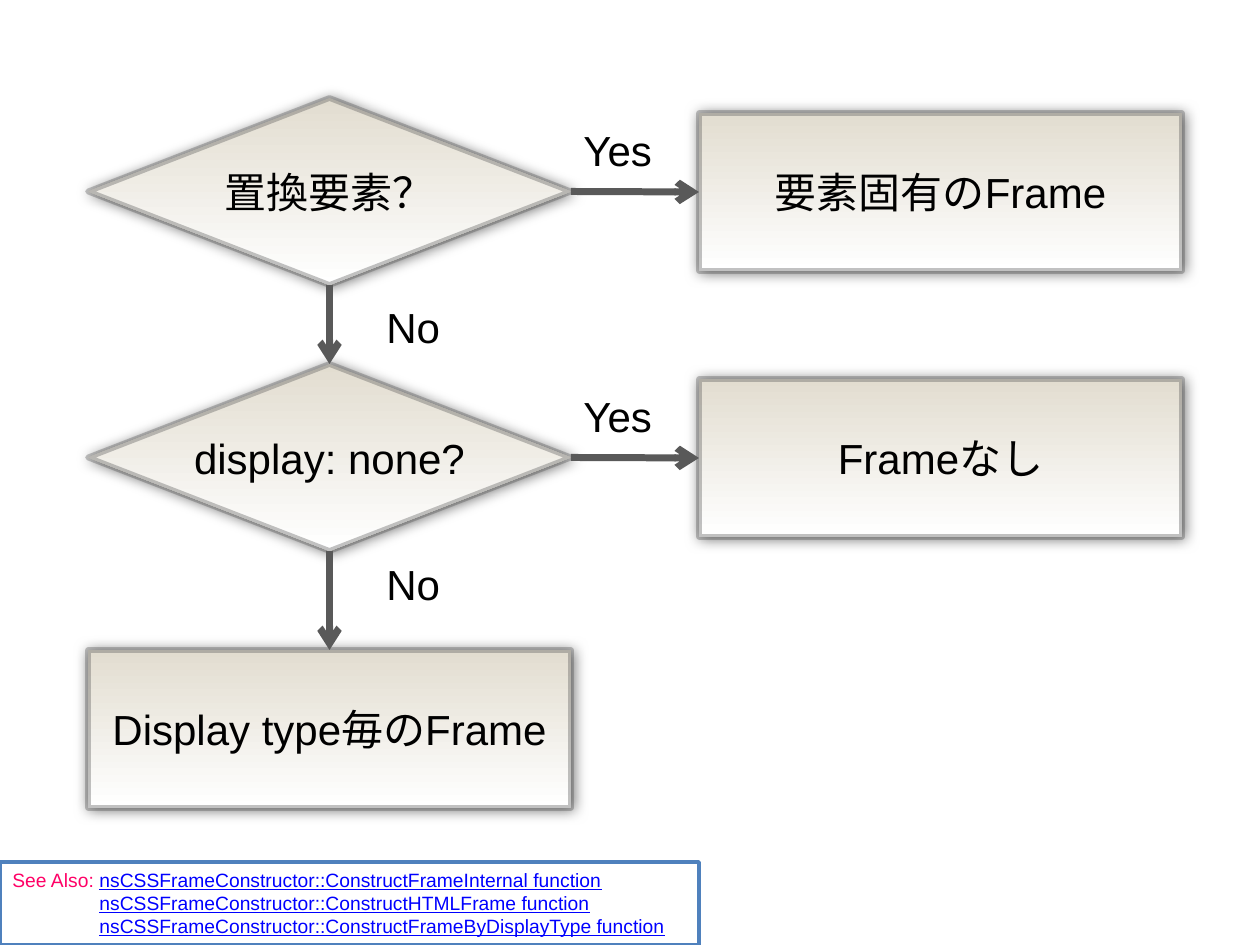
from lxml.etree import SubElement
from pptx import Presentation
from pptx.dml.color import RGBColor
from pptx.enum.shapes import MSO_CONNECTOR as CONNECTOR, MSO_SHAPE as SHAPE
from pptx.enum.text import MSO_ANCHOR as ANCHOR, PP_ALIGN as ALIGN
from pptx.oxml.ns import qn
from pptx.util import Pt

PX = 914400 / 126
COLORS = {
    "ink": "000000", "paper": "FFFFFF", "sand": "E2DDD0", "edge": "595959",
    "frame": "4F81BD", "label": "FF0066", "link": "0000FF",
}
RGB = {name: RGBColor.from_string(value) for name, value in COLORS.items()}


def emu(*lengths):
    return [round(length * PX) for length in lengths]


def add_run(paragraph, text, size, color, underline=None):
    run = paragraph.add_run()
    run.text = text
    formats = {"name": "Arial", "size": Pt(size), "underline": underline}
    for key, value in formats.items():
        setattr(run.font, key, value)
    run.font.color.rgb = RGB[color]


prs = Presentation()
prs.slide_width, prs.slide_height = emu(1260, 945)
slide = prs.slides.add_slide(prs.slide_layouts[6])

see_also = slide.shapes.add_shape(SHAPE.RECTANGLE, *emu(0, 862, 699, 83))
see_also.shadow.inherit = False
see_also.fill.solid()
see_also.fill.fore_color.rgb = RGB["paper"]
see_also.line.color.rgb = RGB["frame"]
see_also.line.width = Pt(2)
see_also.text_frame.vertical_anchor = ANCHOR.TOP
see_also.text_frame.word_wrap = True
functions = ["ConstructFrameInternal", "ConstructHTMLFrame", "ConstructFrameByDisplayType"]
for index, function in enumerate(functions):
    if index == 0:
        paragraph = see_also.text_frame.paragraphs[0]
        add_run(paragraph, "See Also: ", 11, "label")
    else:
        paragraph = see_also.text_frame.add_paragraph()
        properties = paragraph._p.get_or_add_pPr()
        properties.set("marL", "0")
        properties.set("indent", str(emu(87)[0]))
    paragraph.alignment = ALIGN.LEFT
    add_run(paragraph, f"nsCSSFrameConstructor::{function} function", 11, "link", True)

LEFT, RIGHT, WIDTH = 88, 699, 483
DECISION, PROCESS = (SHAPE.FLOWCHART_DECISION, 187), (SHAPE.FLOWCHART_PROCESS, 158)
steps = {
    "replaced": (DECISION, LEFT, 98, "置換要素？"),
    "none": (DECISION, LEFT, 364, "display: none?"),
    "no_frame": (PROCESS, RIGHT, 379, "Frameなし"),
    "own_frame": (PROCESS, RIGHT, 113, "要素固有のFrame"),
    "type_frame": (PROCESS, LEFT, 650, "Display type毎のFrame"),
}
text_format = {
    "margin_left": 0, "margin_right": 0, "margin_top": 0, "margin_bottom": 0,
    "word_wrap": False, "vertical_anchor": ANCHOR.MIDDLE,
}
shadow_format = {
    "blurRad": Pt(8), "dist": Pt(1), "dir": 45 * 60000, "algn": "tl", "rotWithShape": 0,
}
nodes = {}
for key, ((outline, height), left, top, text) in steps.items():
    node = slide.shapes.add_shape(outline, *emu(left, top, WIDTH, height))
    node.fill.gradient()
    node.fill.gradient_angle = 270
    for stop, color in zip(node.fill.gradient_stops, ("sand", "paper")):
        stop.color.rgb = RGB[color]
    node.line.color.rgb = RGB["edge"]
    node.line.width = Pt(3.25)
    edge_color = node.line._ln.find(".//" + qn("a:srgbClr"))
    SubElement(edge_color, qn("a:alpha"), val="37000")

    node.shadow.inherit = False
    effects = node._element.spPr.find(qn("a:effectLst"))
    shadow = SubElement(effects, qn("a:outerShdw"))
    for name, value in shadow_format.items():
        shadow.set(name, str(value))
    shadow_color = SubElement(shadow, qn("a:srgbClr"), val=COLORS["ink"])
    SubElement(shadow_color, qn("a:alpha"), val="56000")

    for name, value in text_format.items():
        setattr(node.text_frame, name, value)
    paragraph = node.text_frame.paragraphs[0]
    paragraph.alignment = ALIGN.CENTER
    add_run(paragraph, text, 24, "ink")
    nodes[key] = node

BOTTOM_TO_TOP, RIGHT_TO_LEFT = (2, 0), (3, 1)
branches = [
    ("replaced", "none", BOTTOM_TO_TOP, "No", 374, 295),
    ("none", "type_frame", BOTTOM_TO_TOP, "No", 374, 552),
    ("replaced", "own_frame", RIGHT_TO_LEFT, "Yes", 571, 118),
    ("none", "no_frame", RIGHT_TO_LEFT, "Yes", 571, 384),
]
for source, target, (start, end), answer, left, top in branches:
    arrow = slide.shapes.add_connector(CONNECTOR.STRAIGHT, 0, 0, 0, 0)
    arrow.begin_connect(nodes[source], start)
    arrow.end_connect(nodes[target], end)
    arrow.line.color.rgb = RGB["edge"]
    arrow.line.width = Pt(4)
    SubElement(arrow.line._ln, qn("a:tailEnd"), type="arrow")
    SubElement(arrow._element.spPr, qn("a:effectLst"))

    label = slide.shapes.add_textbox(*emu(left, top, 157, 63))
    label.text_frame.word_wrap = True
    add_run(label.text_frame.paragraphs[0], answer, 24, "ink")

prs.save("out.pptx")
